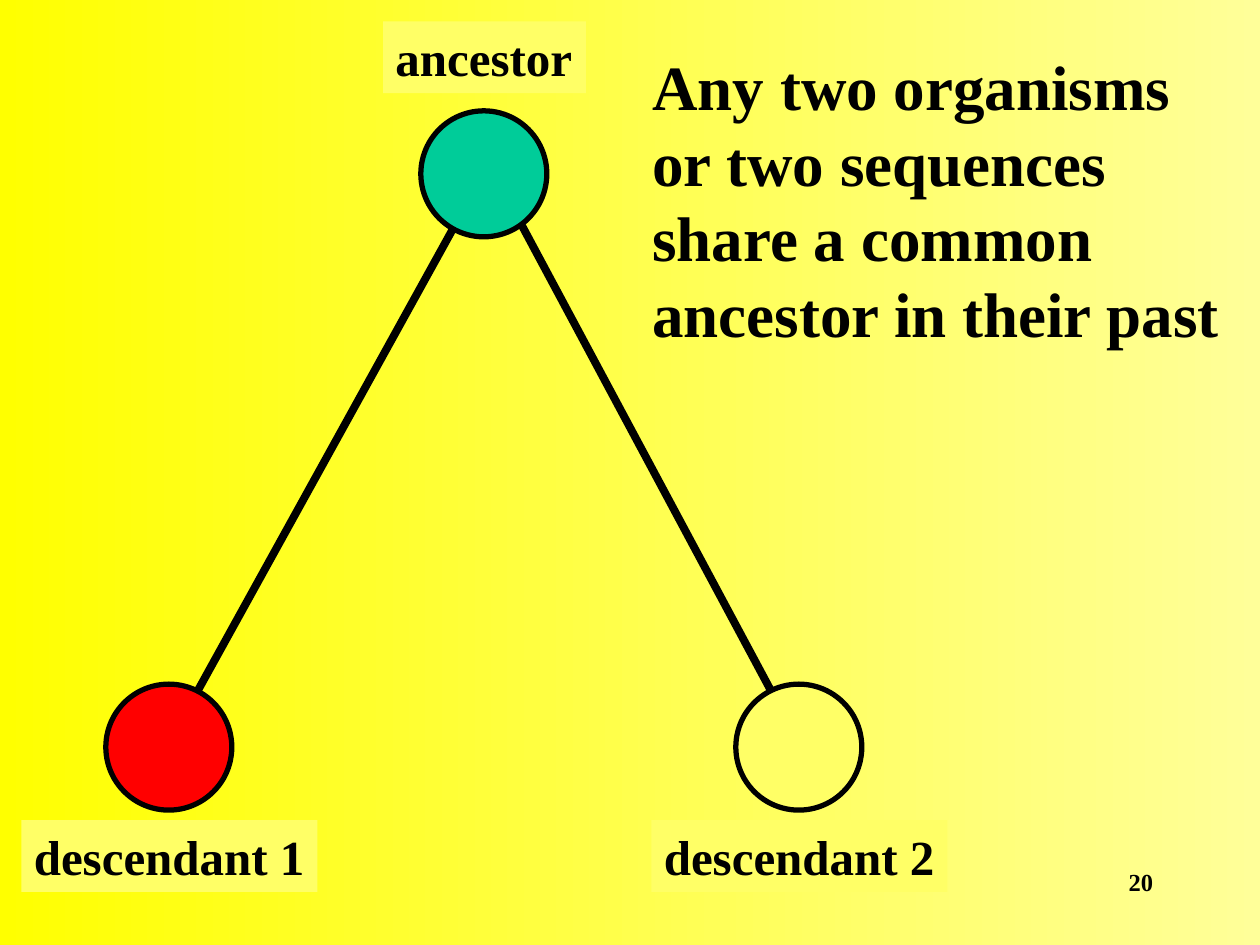
from lxml import etree
from pptx import Presentation
from pptx.dml.color import RGBColor
from pptx.enum import shapes, text
from pptx.oxml import ns
from pptx.util import Inches, Pt

FONT = "Times New Roman"
BLACK = "000000"
PALE = "FFFF66"
DIAMETER = 1
LINE_HEIGHT = 1.2


def color(value):
    return RGBColor.from_string(value)


def paint_background(page, start, end):
    fill = page.background.fill
    fill.gradient()
    fill.gradient_angle = 0
    for stop, value, position in zip(fill.gradient_stops, (start, end), (0, 1)):
        stop.color.rgb = color(value)
        stop.position = position


def write(shape, words, size, align=text.PP_ALIGN.LEFT, wrap=True):
    frame = shape.text_frame
    frame.text = words
    frame.word_wrap = wrap
    frame.vertical_anchor = text.MSO_ANCHOR.TOP
    para = frame.paragraphs[0]
    para.alignment = align
    para.line_spacing = Pt(size * LINE_HEIGHT)
    font = para.runs[0].font
    font.name = FONT
    font.size = Pt(size)
    font.bold = True
    font.color.rgb = color(BLACK)


def add_text(page, left, top, width, height, words, size, align=text.PP_ALIGN.LEFT):
    box = page.shapes.add_textbox(
        Inches(left), Inches(top), Inches(width), Inches(height))
    write(box, words, size, align)


def add_shape(page, kind, left, top, width, height, fill):
    shape = page.shapes.add_shape(
        kind, Inches(left), Inches(top), Inches(width), Inches(height))
    shape.shadow.inherit = False
    shape.fill.solid()
    shape.fill.fore_color.rgb = color(fill)
    return shape


def add_branch(page, start, end):
    branch = page.shapes.add_connector(
        shapes.MSO_CONNECTOR.STRAIGHT, *map(Inches, start + end))
    branch.line.color.rgb = color(BLACK)
    branch.line.width = Pt(4.5)
    properties = branch._element.find(ns.qn("p:spPr"))
    etree.SubElement(properties, ns.qn("a:effectLst"))


def add_node(page, left, top, fill):
    node = add_shape(page, shapes.MSO_SHAPE.OVAL, left, top, DIAMETER, DIAMETER, fill)
    node.line.color.rgb = color(BLACK)
    node.line.width = Pt(3)


def add_label(page, left, top, width, words):
    label = add_shape(page, shapes.MSO_SHAPE.RECTANGLE, left, top, width, 0.57, PALE)
    label.line.fill.background()
    write(label, words, 28, wrap=False)


def main():
    deck = Presentation()
    deck.slide_width, deck.slide_height = Inches(10), Inches(7.5)
    page = deck.slides.add_slide(deck.slide_layouts[6])
    paint_background(page, "FFFF00", "FFFF99")

    add_text(page, 7.17, 6.83, 2.08, 0.5, "20", 14, text.PP_ALIGN.RIGHT)
    add_text(page, 5.08, 0.33, 4.83, 2.52,
             "Any two organisms or two sequences share a common "
             "ancestor in their past", 36)

    for foot in (1.3, 6.38):
        add_branch(page, (3.88, 1.3), (foot, 5.97))

    for left, top, fill in ((3.34, 0.88, "00CC99"),
                            (0.84, 5.43, "FF0000"),
                            (5.84, 5.43, PALE)):
        add_node(page, left, top, fill)

    for left, top, width, words in ((3.04, 0.17, 1.61, "ancestor"),
                                    (0.17, 6.51, 2.35, "descendant 1"),
                                    (5.17, 6.51, 2.35, "descendant 2")):
        add_label(page, left, top, width, words)

    deck.save("out.pptx")


if __name__ == "__main__":
    main()
